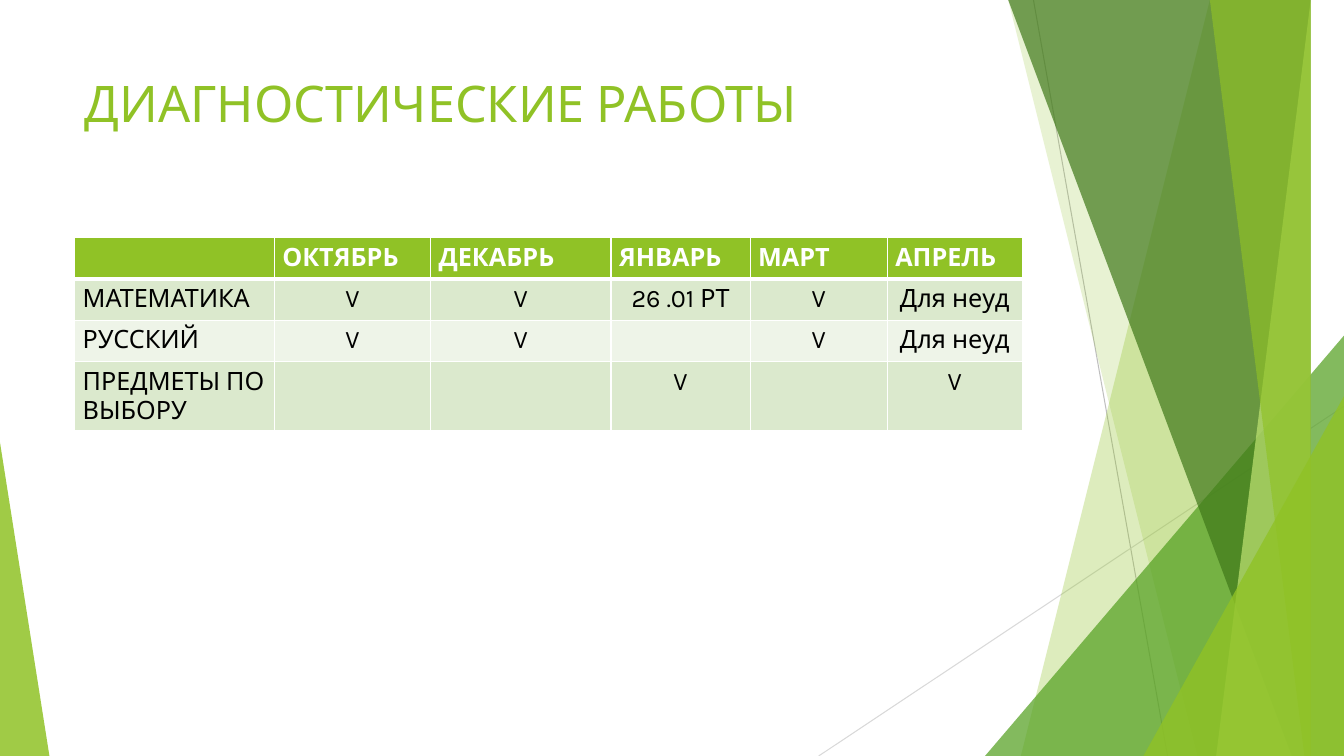
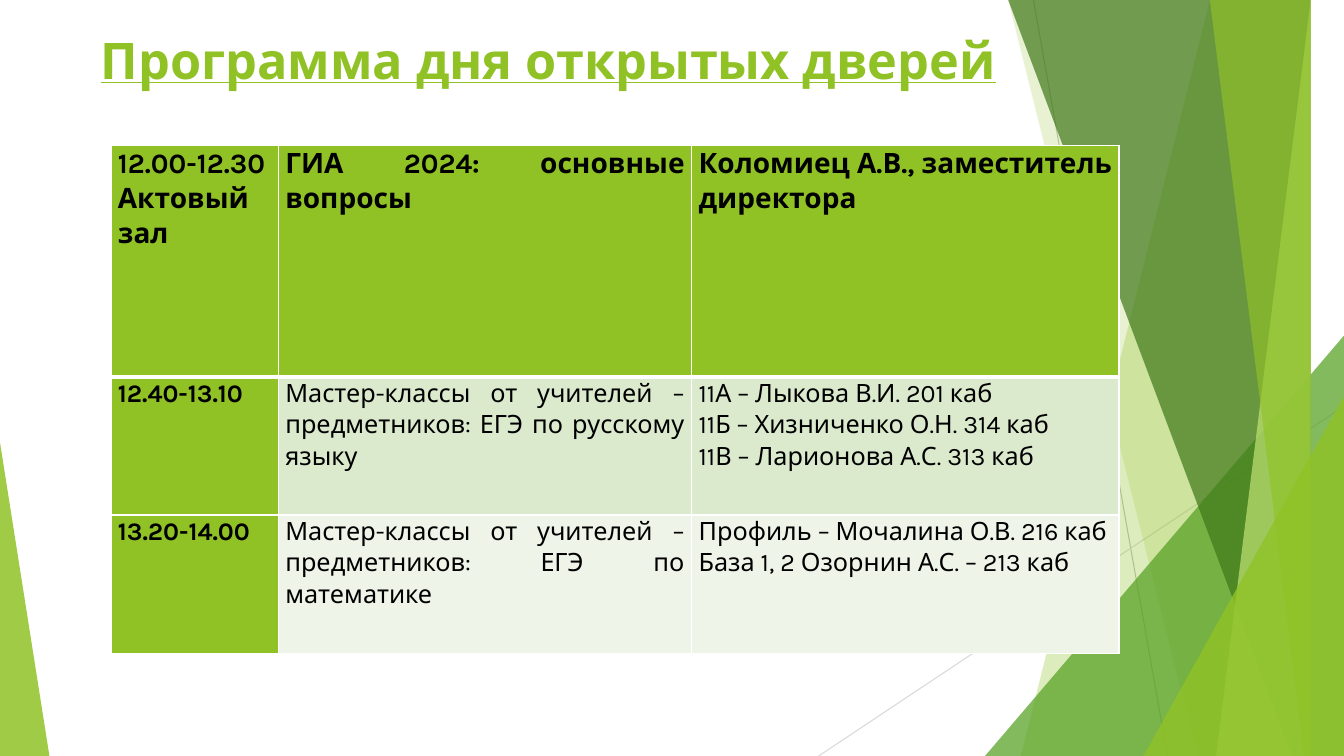
import lxml.etree
import pptx
import pptx.dml.color
import pptx.enum.shapes
import pptx.enum.text
import pptx.oxml.ns
import pptx.util

Inches, Pt = pptx.util.Inches, pptx.util.Pt
RGBColor = pptx.dml.color.RGBColor
ALIGN = pptx.enum.text.PP_ALIGN
qn = pptx.oxml.ns.qn

# Content
WORKS_TITLE = "ДИАГНОСТИЧЕСКИЕ РАБОТЫ"
WORKS = [
    ["", "ОКТЯБРЬ", "ДЕКАБРЬ", "ЯНВАРЬ", "МАРТ", "АПРЕЛЬ"],
    ["МАТЕМАТИКА", "V", "V", "26 .01 РТ", "V", "Для неуд"],
    ["РУССКИЙ", "V", "V", "", "V", "Для неуд"],
    ["ПРЕДМЕТЫ ПО ВЫБОРУ", "", "", "V", "", "V"],
]
PROGRAMME_TITLE = "Программа дня открытых дверей"
PROGRAMME = [
    ["12.00-12.30\nАктовый зал",
     "ГИА 2024: основные вопросы",
     "Коломиец А.В., заместитель директора"],
    ["12.40-13.10",
     "Мастер-классы от учителей –предметников: ЕГЭ по русскому языку",
     "11А – Лыкова В.И. 201 каб\n11Б – Хизниченко О.Н. 314 каб\n11В – Ларионова А.С. 313 каб"],
    ["13.20-14.00",
     "Мастер-классы от учителей –предметников: ЕГЭ по математике",
     "Профиль – Мочалина О.В. 216 каб\nБаза 1, 2 Озорнин А.С. – 213 каб"],
]

# Shared style
FONT = "Karla"
GREEN = RGBColor(0x90, 0xC2, 0x26)
MID_GREEN = RGBColor(0x54, 0xA0, 0x21)
DARK_GREEN = RGBColor(0x3F, 0x78, 0x19)
LIGHT_GREEN = RGBColor(0xC0, 0xE4, 0x74)
BANDS = [RGBColor(0xEE, 0xF4, 0xE8), RGBColor(0xDB, 0xE9, 0xCD)]
GREY = RGBColor(0xBF, 0xBF, 0xBF)
PALE_GREY = RGBColor(0xD9, 0xD9, 0xD9)
WHITE = RGBColor(0xFF, 0xFF, 0xFF)
BLACK = RGBColor(0, 0, 0)
WIDTH, HEIGHT = 13.33, 7.5

# Backdrop: lines as x1, y1, x2, y2; facets from back to front.
# A band runs from its top x and bottom x to the right edge of the slide.
# A triangle has left, top, width and the place of its tip (0 left, 1 right).
RAYS = [(10.25, 0, 11.58, HEIGHT, GREY), (WIDTH, 4.03, 8.12, HEIGHT, PALE_GREY)]
FACETS = [
    ("band", (12.28, 10.04), GREEN, 30),
    ("band", (10.5, 11.83), GREEN, 20),
    ("triangle", (9.77, 3.33, 3.56, 1), MID_GREEN, 72),
    ("band", (10.21, 12.91), DARK_GREEN, 70),
    ("band", (13.03, 11.92), LIGHT_GREEN, 70),
    ("band", (11.96, 13.18), GREEN, 65),
    ("triangle", (11.34, 3.93, 1.99, 1), GREEN, 80),
    ("triangle", (0, 4.39, 0.49, 0), GREEN, 85),
]


def add_band(shapes, top_x, bottom_x):
    outline = shapes.build_freeform(top_x, 0, scale=Inches(1))
    outline.add_line_segments([(WIDTH, 0), (WIDTH, HEIGHT), (bottom_x, HEIGHT)], close=True)
    return outline.convert_to_shape()


def add_triangle(shapes, left, top, width, tip):
    triangle = shapes.add_shape(
        pptx.enum.shapes.MSO_SHAPE.ISOSCELES_TRIANGLE,
        Inches(left), Inches(top), Inches(width), Inches(HEIGHT - top))
    triangle.adjustments[0] = tip
    return triangle


def add_backdrop(slide):
    """Draw the facets once and hand them to the layout that all slides share."""
    backdrop = slide.shapes.add_group_shape()
    for x1, y1, x2, y2, color in RAYS:
        ray = backdrop.shapes.add_connector(
            pptx.enum.shapes.MSO_CONNECTOR.STRAIGHT,
            Inches(x1), Inches(y1), Inches(x2), Inches(y2))
        ray.line.color.rgb = color
        ray.line.width = Pt(0.75)
        lxml.etree.SubElement(ray.element.spPr, qn("a:effectLst"))
    for kind, place, color, opacity in FACETS:
        add_facet = add_band if kind == "band" else add_triangle
        facet = add_facet(backdrop.shapes, *place)
        facet.shadow.inherit = False
        facet.line.fill.background()
        facet.fill.solid()
        facet.fill.fore_color.rgb = color
        tint = facet.element.xpath(".//a:solidFill/a:srgbClr")[0]
        lxml.etree.SubElement(tint, qn("a:alpha")).set("val", str(opacity * 1000))
    for number, part in enumerate(backdrop.element.xpath(".//p:cNvPr"), 20):
        part.set("id", str(number))
    slide.slide_layout.shapes.element.insert(2, backdrop.element)


def style_runs(paragraph, size, color, bold):
    for run in paragraph.runs:
        run.font.name = FONT
        run.font.size = Pt(size)
        run.font.bold = bold
        run.font.color.rgb = color


def set_title(slide, text, top, height, align, emphasis=False):
    title = slide.shapes.title
    title.left, title.top = Inches(0.74), Inches(top)
    title.width, title.height = Inches(9.4), Inches(height)
    frame = title.text_frame
    frame.text = text
    frame.word_wrap = True
    frame.vertical_anchor = pptx.enum.text.MSO_ANCHOR.TOP
    heading = frame.paragraphs[0]
    heading.alignment = align
    style_runs(heading, 36, GREEN, emphasis)
    heading.runs[0].font.underline = emphasis


def set_borders(cell, row):
    properties = cell._tc.get_or_add_tcPr()
    widths = {"L": 1, "R": 1, "T": 3 if row == 1 else 1, "B": 3 if row == 0 else 1}
    for side, width in widths.items():
        border = lxml.etree.SubElement(properties, qn(f"a:ln{side}"), w=str(Pt(width)))
        fill = lxml.etree.SubElement(border, qn("a:solidFill"))
        lxml.etree.SubElement(fill, qn("a:srgbClr"), val=str(WHITE))


def add_grid(slide, rows, left, top, widths, heights, margins, cell_style):
    """cell_style(row, column) gives fill, size, colour, bold, alignment, line spacing."""
    grid = slide.shapes.add_table(
        len(rows), len(widths), Inches(left), Inches(top),
        Inches(sum(widths)), Inches(sum(heights))).table
    grid.horz_banding = False
    for column, width in zip(grid.columns, widths):
        column.width = Inches(width)
    for row, height in zip(grid.rows, heights):
        row.height = Inches(height)
    for r, texts in enumerate(rows):
        for c, text in enumerate(texts):
            fill, size, color, bold, align, spacing = cell_style(r, c)
            cell = grid.cell(r, c)
            set_borders(cell, r)
            cell.fill.solid()
            cell.fill.fore_color.rgb = fill
            cell.margin_left = cell.margin_right = Inches(margins[0])
            cell.margin_top = cell.margin_bottom = Inches(margins[1])
            cell.text_frame.text = text
            for paragraph in cell.text_frame.paragraphs:
                paragraph.alignment = align
                paragraph.line_spacing = spacing
                style_runs(paragraph, size, color, bold)


def works_style(row, column):
    header = row == 0
    align = ALIGN.LEFT if header or column == 0 else ALIGN.CENTER
    return (GREEN if header else BANDS[row % 2], 18,
            WHITE if header else BLACK, header, align, 1.0)


def programme_style(row, column):
    heading = row == 0 or column == 0
    return (GREEN if heading else BANDS[row % 2], 20 if row == 0 else 18,
            BLACK, heading, ALIGN.JUSTIFY, 1.07)


deck = pptx.Presentation()
deck.slide_width, deck.slide_height = Inches(WIDTH), Inches(HEIGHT)
title_only = deck.slide_layouts[5]

# Diagnostic works
works = deck.slides.add_slide(title_only)
add_backdrop(works)
set_title(works, WORKS_TITLE, 0.67, 1.44, ALIGN.LEFT)
add_grid(works, WORKS, 0.74, 2.36, [1.98, 1.55, 1.79, 1.38, 1.36, 1.34],
         [0.41, 0.41, 0.41, 0.68], (0.08, 0.05), works_style)

# Open day programme
programme = deck.slides.add_slide(title_only)
set_title(programme, PROGRAMME_TITLE, 0.24, 0.87, ALIGN.CENTER, emphasis=True)
add_grid(programme, PROGRAMME, 1.1, 1.44, [1.66, 4.1, 4.24],
         [2.3, 1.37, 1.37], (0.07, 0), programme_style)

deck.save("out.pptx")
